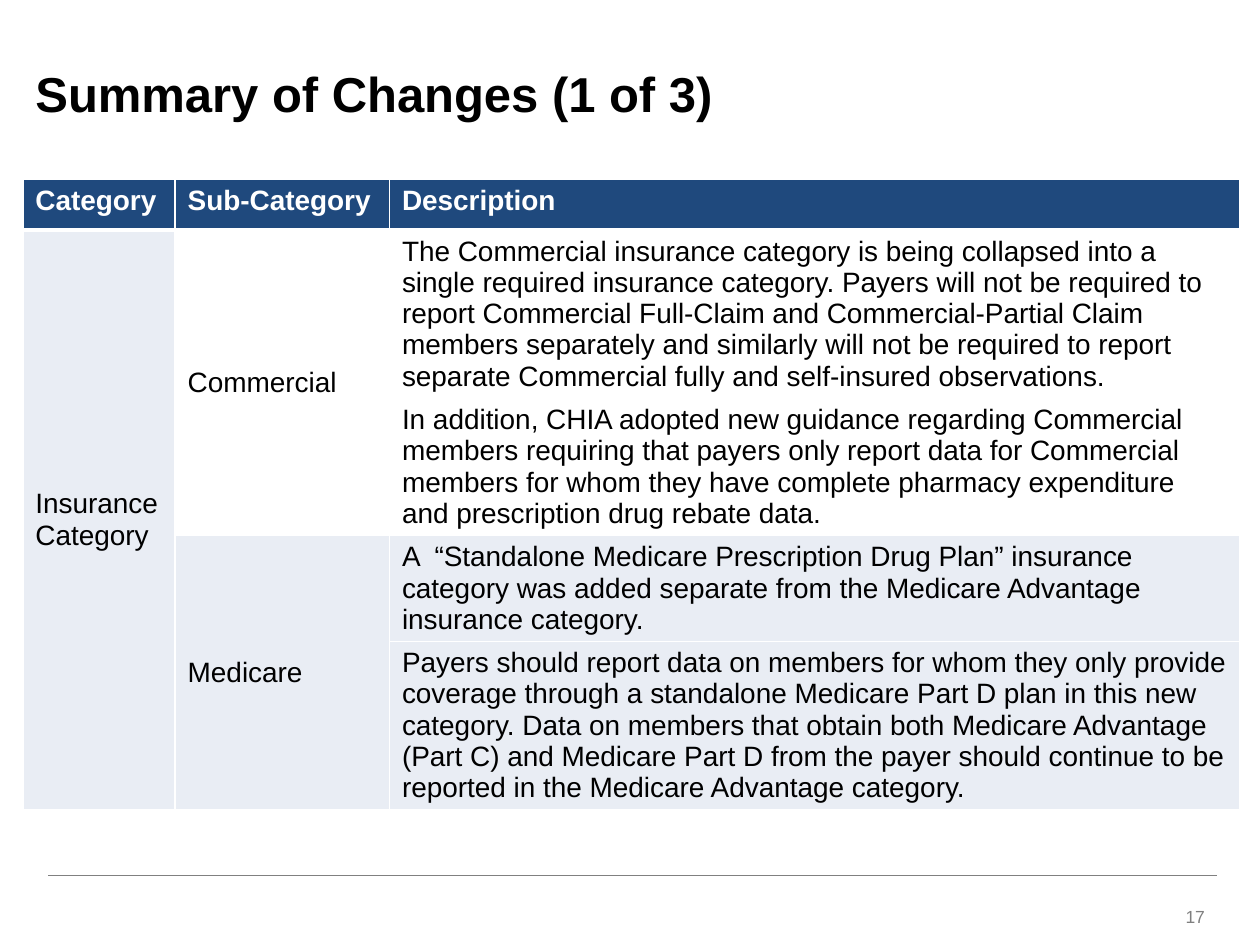
import pptx
import pptx.util
import pptx.dml.color
import pptx.enum.shapes
import pptx.enum.text
import pptx.oxml.ns
from lxml import etree

Cm, Pt = pptx.util.Cm, pptx.util.Pt
RGBColor = pptx.dml.color.RGBColor
ANCHOR = pptx.enum.text.MSO_ANCHOR
ALIGN = pptx.enum.text.PP_ALIGN
qn = pptx.oxml.ns.qn

# Content
TITLE = "Summary of Changes (1 of 3)"
PAGE_NUMBER = "17"
ROWS = [
    ["Category", "Sub-Category", "Description"],
    ["Insurance Category", "Commercial",
     "The Commercial insurance category is being collapsed into a single required "
     "insurance category. Payers will not be required to report Commercial Full-Claim "
     "and Commercial-Partial Claim members separately and similarly will not be required "
     "to report separate Commercial fully and self-insured observations."],
    ["", "",
     "In addition, CHIA adopted new guidance regarding Commercial members requiring that "
     "payers only report data for Commercial members for whom they have complete pharmacy "
     "expenditure and prescription drug rebate data."],
    ["", "Medicare",
     "A  “Standalone Medicare Prescription Drug Plan” insurance category was added "
     "separate from the Medicare Advantage insurance category."],
    ["", "",
     "Payers should report data on members for whom they only provide coverage through a "
     "standalone Medicare Part D plan in this new category. Data on members that obtain "
     "both Medicare Advantage (Part C) and Medicare Part D from the payer should continue "
     "to be reported in the Medicare Advantage category."],
]
MERGES = [((1, 0), (4, 0)), ((1, 1), (2, 1)), ((3, 1), (4, 1))]
COLUMN_WIDTHS = [3.07, 4.32, 17.15]
ROW_HEIGHTS = [1.03, 3.37, 2.75, 2.13, 3.37]
SHADED_ROWS = (3, 4)

# Style
FONT = "Arial"
BLACK = RGBColor(0x00, 0x00, 0x00)
WHITE = RGBColor(0xFF, 0xFF, 0xFF)
NAVY = RGBColor(0x1F, 0x49, 0x7D)
PALE = RGBColor(0xE9, 0xED, 0xF4)
RULE_GRAY = RGBColor(0x80, 0x80, 0x80)
NUMBER_GRAY = RGBColor(0x7F, 0x7F, 0x7F)


def write(text_frame, text, size, color, bold=False, align=ALIGN.LEFT):
    paragraph = text_frame.paragraphs[0]
    paragraph.alignment = align
    run = paragraph.add_run()
    run.text = text
    run.font.name = FONT
    run.font.size = Pt(size)
    run.font.bold = bold
    run.font.color.rgb = color


def place(shape, left, top, width, height):
    shape.left, shape.top = Cm(left), Cm(top)
    shape.width, shape.height = Cm(width), Cm(height)


def add_borders(cell, widths):
    properties = cell._tc.get_or_add_tcPr()
    for side, width in widths.items():
        line = etree.SubElement(properties, qn(f"a:ln{side}"), w=str(Pt(width)))
        fill = etree.SubElement(line, qn("a:solidFill"))
        etree.SubElement(fill, qn("a:srgbClr"), val=str(WHITE))


presentation = pptx.Presentation()
presentation.slide_width, presentation.slide_height = Cm(25.4), Cm(19.05)
slide = presentation.slides.add_slide(presentation.slide_layouts[5])

# Title
title = slide.shapes.title
place(title, 0.46, 0.99, 21.56, 1.78)
title.text_frame.vertical_anchor = ANCHOR.MIDDLE
write(title.text_frame, TITLE, 28, BLACK, bold=True)

# Footer rule
rule = slide.shapes.add_connector(
    pptx.enum.shapes.MSO_CONNECTOR.STRAIGHT, Cm(0.97), Cm(17.65), Cm(24.54), Cm(17.65))
rule.line.color.rgb = RULE_GRAY
rule.line.width = Pt(0.5)
etree.SubElement(rule._element.spPr, qn("a:effectLst"))

# Table
table = slide.shapes.add_table(
    len(ROWS), len(COLUMN_WIDTHS), Cm(0.46), Cm(3.61),
    Cm(sum(COLUMN_WIDTHS)), Cm(sum(ROW_HEIGHTS))).table
table.horz_banding = False
for column, width in zip(table.columns, COLUMN_WIDTHS):
    column.width = Cm(width)
for row, height in zip(table.rows, ROW_HEIGHTS):
    row.height = Cm(height)
for first, last in MERGES:
    table.cell(*first).merge(table.cell(*last))

for row_index, texts in enumerate(ROWS):
    header = row_index == 0
    for column_index, text in enumerate(texts):
        cell = table.cell(row_index, column_index)
        add_borders(cell, {"L": 1, "R": 1, "T": 3 if row_index == 1 else 1,
                           "B": 3 if header else 1})
        if header:
            cell.fill.solid()
            cell.fill.fore_color.rgb = NAVY
        elif column_index == 0 or row_index in SHADED_ROWS:
            cell.fill.solid()
            cell.fill.fore_color.rgb = PALE
        else:
            cell.fill.background()
        if not header and column_index < 2:
            cell.vertical_anchor = ANCHOR.MIDDLE
        if text:
            write(cell.text_frame, text, 16, WHITE if header else BLACK, bold=header)

# Page number
number = slide.shapes.add_textbox(Cm(18.62), Cm(17.96), Cm(5.92), Cm(1.02))
number.text_frame.word_wrap = True
number.text_frame.vertical_anchor = ANCHOR.MIDDLE
write(number.text_frame, PAGE_NUMBER, 10, NUMBER_GRAY, align=ALIGN.RIGHT)

presentation.save("out.pptx")
